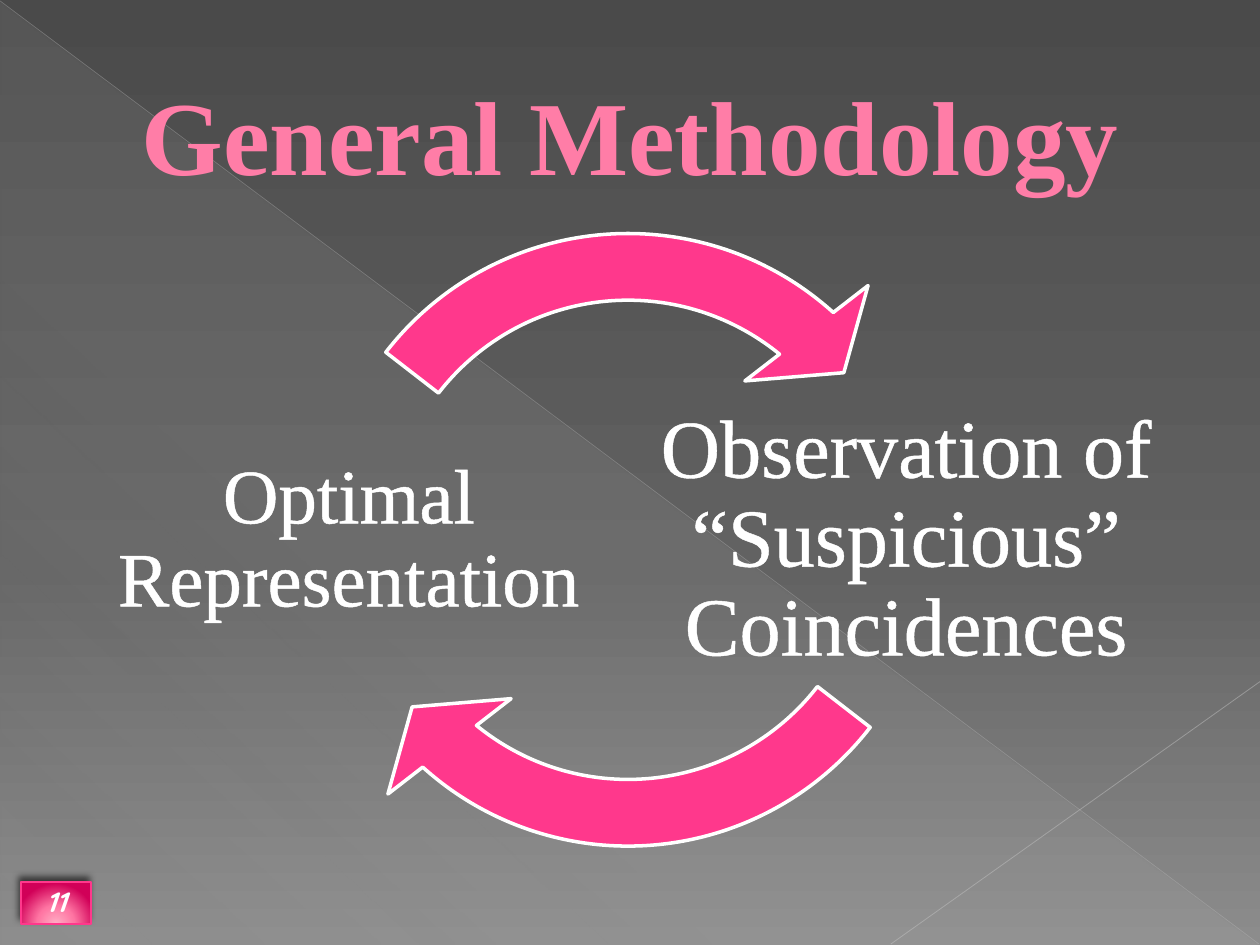
from lxml import etree
from pptx import Presentation
from pptx.dml.color import RGBColor
from pptx.enum.shapes import MSO_CONNECTOR, MSO_SHAPE
from pptx.enum.text import MSO_ANCHOR, PP_ALIGN
from pptx.oxml.ns import qn
from pptx.util import Pt

TRIANGLE = MSO_SHAPE.RIGHT_TRIANGLE
CIRCULAR_ARROW = MSO_SHAPE.CIRCULAR_ARROW
RECTANGLE = MSO_SHAPE.RECTANGLE
STRAIGHT = MSO_CONNECTOR.STRAIGHT
MIDDLE, BOTTOM = MSO_ANCHOR.MIDDLE, MSO_ANCHOR.BOTTOM
LEFT, CENTER = PP_ALIGN.LEFT, PP_ALIGN.CENTER

SERIF = "Times New Roman"
WHITE = "FFFFFF"
PINK = "FF388C"


def color(value):
    return RGBColor.from_string(value)


def add_element(parent, tag, **attributes):
    element = etree.SubElement(parent, qn(tag))
    for name, value in attributes.items():
        element.set(name, str(value))
    return element


def add_color(parent, value, alpha=100):
    """Append an sRGB colour with its opacity in percent."""
    element = add_element(parent, "a:srgbClr", val=value)
    if alpha < 100:
        add_element(element, "a:alpha", val=alpha * 1000)


def set_gradient(owner, stops, angle=None, focus=None):
    """Replace the solid fill in owner by a linear or a circular gradient."""
    solid = owner.find(qn("a:solidFill"))
    gradient = etree.Element(qn("a:gradFill"), rotWithShape="1")
    stop_list = add_element(gradient, "a:gsLst")
    for position, *shade in stops:
        add_color(add_element(stop_list, "a:gs", pos=position * 1000), *shade)
    if focus:
        path = add_element(gradient, "a:path", path="circle")
        sides = {side: percent * 1000 for side, percent in zip("ltrb", focus)}
        add_element(path, "a:fillToRect", **sides)
    else:
        add_element(gradient, "a:lin", ang=angle * 60000, scaled=0)
    owner.replace(solid, gradient)


def add_background(slide):
    slide.background.fill.solid()
    owner = slide.element.find(".//" + qn("p:bgPr"))
    set_gradient(owner, [(0, "4A4A4A"), (60, "626262"), (100, "8C8C8C")], angle=90)


def add_plain_shape(slide, kind, bounds, fill, line=None, width=0):
    shape = slide.shapes.add_shape(kind, *map(Pt, bounds))
    shape.shadow.inherit = False
    shape.fill.solid()
    shape.fill.fore_color.rgb = color(fill)
    if line:
        shape.line.color.rgb = color(line)
        shape.line.width = Pt(width)
    else:
        shape.line.fill.background()
    return shape


def add_thin_line(slide, ends, shade, width, alpha):
    line = slide.shapes.add_connector(STRAIGHT, *map(Pt, ends))
    line.line.color.rgb = color(shade)
    line.line.width = Pt(width)
    properties = line._element.spPr
    add_element(properties.find(".//" + qn("a:srgbClr")), "a:alpha", val=alpha * 1000)
    add_element(properties, "a:effectLst")


def write_text(shape, text, font, size, shade, anchor, align, bold=False, italic=False):
    frame = shape.text_frame
    frame.word_wrap = True
    frame.vertical_anchor = anchor
    para = frame.paragraphs[0]
    para.text = text
    para.alignment = align
    para.font.name = font
    para.font.size = Pt(size)
    para.font.color.rgb = color(shade)
    para.font.bold = bold
    para.font.italic = italic
    return para


def outline_text(para, shade, width):
    for span in para.runs:
        properties = span._r.get_or_add_rPr()
        line = add_element(properties, "a:ln", w=Pt(width))
        add_color(add_element(line, "a:solidFill"), shade)


def add_title(slide, text):
    box = slide.shapes.add_textbox(Pt(36), Pt(21), Pt(648), Pt(110))
    para = write_text(box, text, SERIF, 60, "FF7DA7", MIDDLE, LEFT, bold=True)
    para._p.get_or_add_pPr().set("marL", str(Pt(38)))
    outline_text(para, "B12761", 0.5)


def add_step(slide, text, left, width, size, inset):
    box = slide.shapes.add_textbox(Pt(left), Pt(211), Pt(width), Pt(195))
    frame = box.text_frame
    frame.margin_left = frame.margin_right = Pt(inset)
    frame.margin_top = frame.margin_bottom = Pt(inset)
    para = write_text(box, text, SERIF, size, WHITE, MIDDLE, CENTER)
    para.line_spacing = 0.9
    outline_text(para, WHITE, 1.45)


def add_cycle_arrow(slide, start, end):
    """Draw an arrow of the cycle, clockwise between two angles in degrees."""
    arrow = add_plain_shape(slide, CIRCULAR_ARROW, (158.4, 108, 401, 401), PINK, WHITE, 2)
    per_degree = 0.6
    values = (0.095, 11.42 * per_degree, end * per_degree, start * per_degree, 0.111)
    for index, value in enumerate(values):
        arrow.adjustments[index] = value


def add_page_badge(slide, number):
    badge = add_plain_shape(slide, RECTANGLE, (12, 504, 40, 24), PINK, PINK, 0.75)
    properties = badge._element.spPr
    set_gradient(properties, [(0, "FFAFC5"), (46, "FF75A3"), (100, "D10058")],
                 focus=(50, 155, 50, -55))
    shadow = add_element(properties.find(qn("a:effectLst")), "a:outerShdw",
                         blurRad=Pt(4), dist=Pt(3), dir=245 * 60000, rotWithShape=0)
    add_color(shadow, "000000", 60)
    write_text(badge, number, "Quicksand", 16, WHITE, BOTTOM, CENTER, bold=True, italic=True)


def main():
    deck = Presentation()
    deck.slide_width, deck.slide_height = Pt(720), Pt(540)
    slide = deck.slides.add_slide(deck.slide_layouts[6])

    add_background(slide)
    triangle = add_plain_shape(slide, TRIANGLE, (0.5, 1.2, 719, 538.8), "D2D2D2")
    set_gradient(triangle._element.spPr,
                 [(0, "D2D2D2", 10), (70, "D2D2D2", 8), (100, "D2D2D2", 1)], angle=133)
    add_thin_line(slide, (0, 0.5, 719.5, 539.5), "BFBFBF", 0.39, 35)
    add_thin_line(slide, (720, 389.5, 509, 539.5), "C6C6C6", 0.47, 45)

    add_title(slide, "General Methodology")
    add_step(slide, "Observation of “Suspicious” Coincidences", 372.2, 291.6, 47, 5)
    add_cycle_arrow(slide, 37.75, 130.83)
    add_step(slide, "Optimal Representation", 56.2, 286.6, 44, 4.4)
    add_cycle_arrow(slide, 217.75, 310.83)
    add_page_badge(slide, "11")

    deck.save("out.pptx")


if __name__ == "__main__":
    main()
